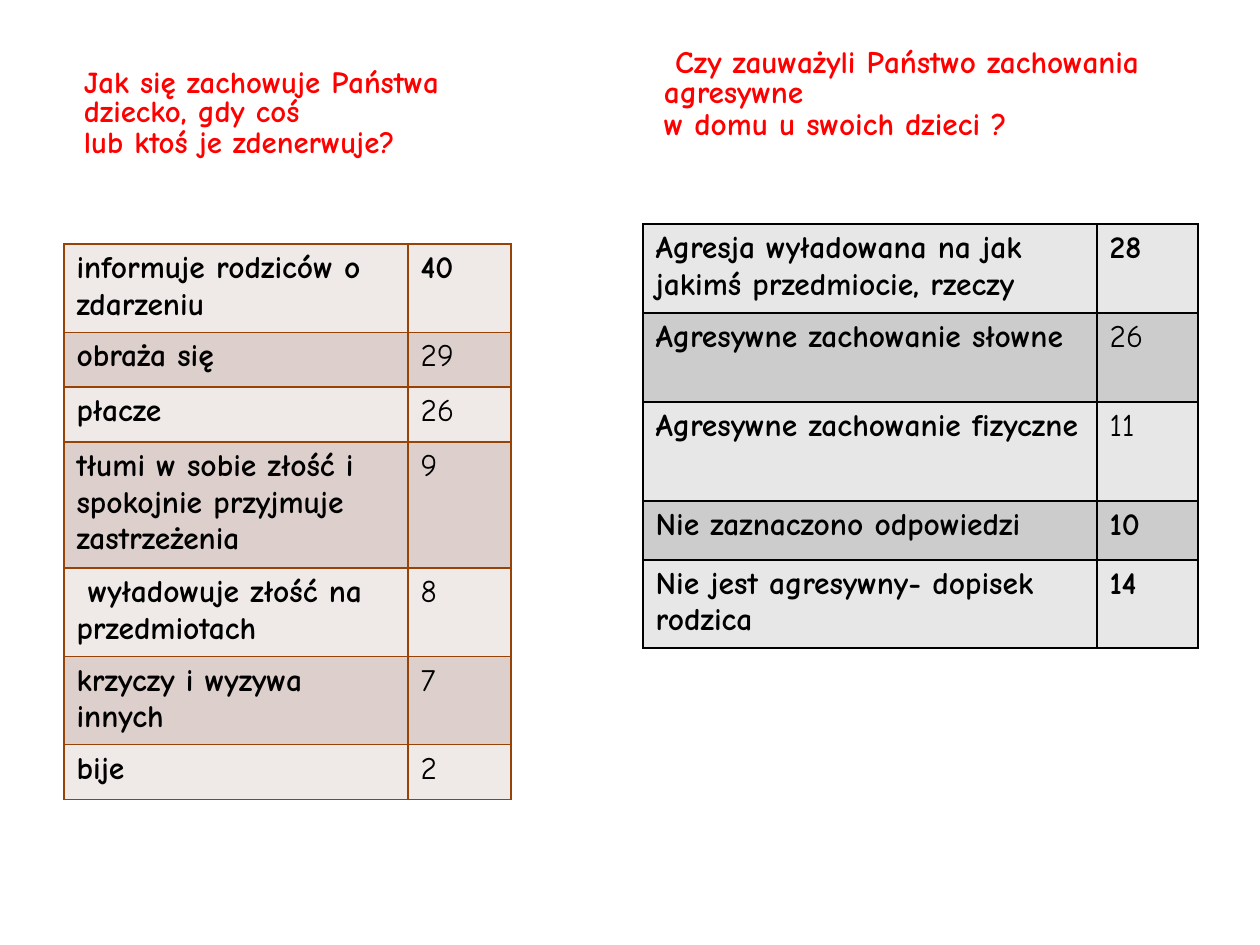
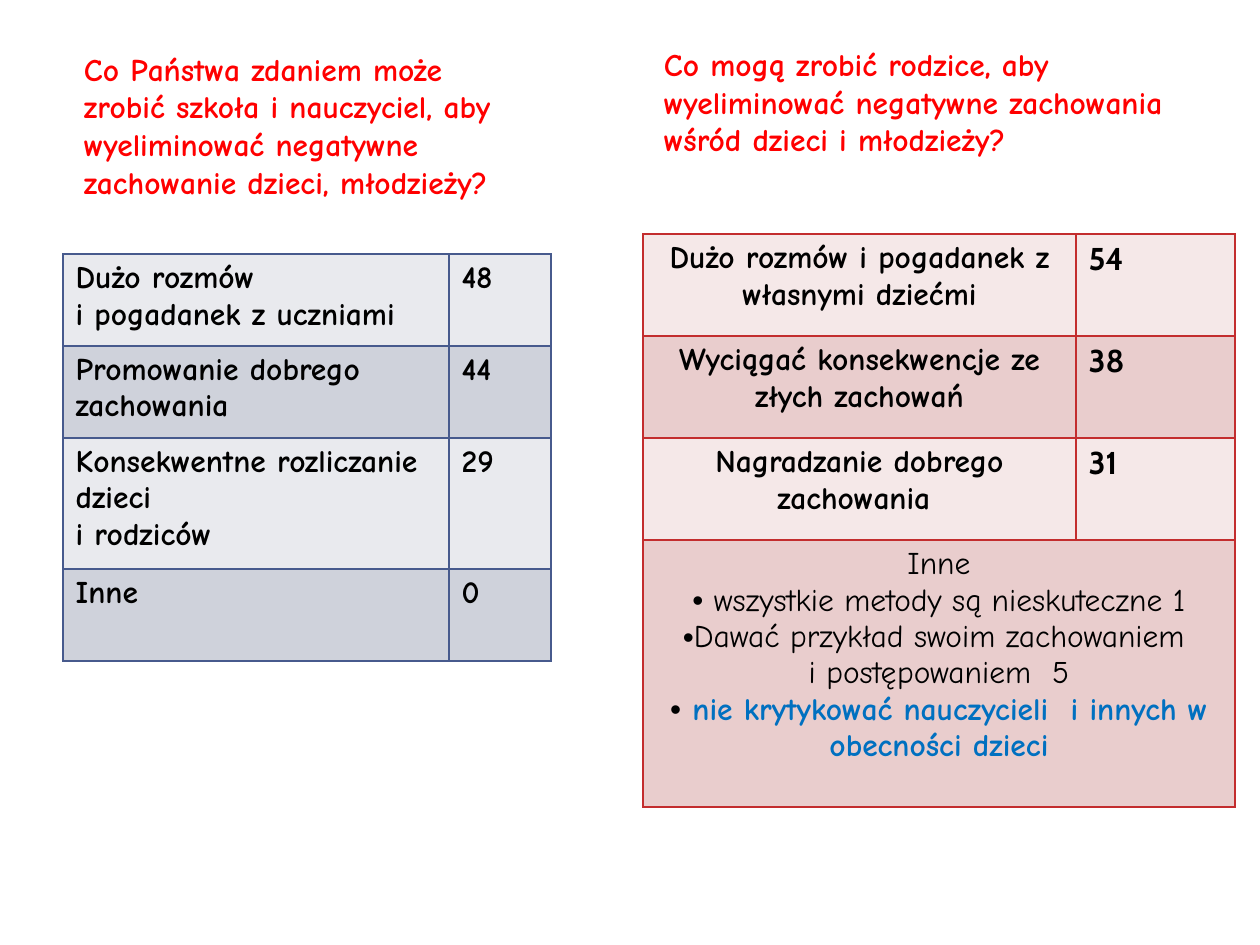
from lxml.etree import SubElement
from pptx import Presentation
from pptx.dml.color import RGBColor
from pptx.enum.text import MSO_ANCHOR, PP_ALIGN
from pptx.oxml.ns import qn
from pptx.util import Emu, Pt

PX_PER_INCH = 126
BODY_FONT = "Comic Neue"
NUMBER_FONT = "Cabin"
BODY_SIZE = 18

WHITE = RGBColor(0xFF, 0xFF, 0xFF)
BLACK = RGBColor(0x00, 0x00, 0x00)
QUESTION_RED = RGBColor(0xFF, 0x00, 0x00)
ADVICE_BLUE = RGBColor(0x00, 0x70, 0xC0)

BROWN = (RGBColor(0x96, 0x43, 0x05), RGBColor(0xEF, 0xE9, 0xE7), RGBColor(0xDD, 0xCF, 0xCC))
GREY = (BLACK, RGBColor(0xE7, 0xE7, 0xE7), RGBColor(0xCC, 0xCC, 0xCC))
NAVY = (RGBColor(0x47, 0x5A, 0x8D), RGBColor(0xE9, 0xEA, 0xEE), RGBColor(0xCF, 0xD2, 0xDB))
RED = (RGBColor(0xC3, 0x2D, 0x2E), RGBColor(0xF5, 0xE8, 0xE8), RGBColor(0xE9, 0xCD, 0xCD))

ANGER_REACTIONS = [
    ("informuje rodziców o zdarzeniu", "40", True, 86),
    ("obraża się", "29", False, 55),
    ("płacze", "26", False, 55),
    ("tłumi w sobie złość i spokojnie przyjmuje zastrzeżenia", "9", False, 122),
    (" wyładowuje złość na przedmiotach", "8", False, 86),
    ("krzyczy i wyzywa innych", "7", False, 86),
    ("bije", "2", False, 55),
]
HOME_AGGRESSION = [
    ("Agresja wyładowana na jak\njakimś przedmiocie, rzeczy", "28", True, 89),
    ("Agresywne zachowanie słowne", "26", False, 89),
    ("Agresywne zachowanie fizyczne", "11", False, 99),
    ("Nie zaznaczono odpowiedzi", "10", True, 59),
    ("Nie jest agresywny- dopisek rodzica", "14", True, 86),
]
SCHOOL_ACTIONS = [
    ("Dużo rozmów\ni pogadanek z uczniami", "48", True, 92),
    ("Promowanie dobrego zachowania", "44", True, 92),
    ("Konsekwentne rozliczanie dzieci\ni rodziców", "29", True, 131),
    ("Inne", "0", True, 92),
]
PARENT_ACTIONS = [
    ("Dużo rozmów i pogadanek z własnymi dziećmi", "54", True, 102),
    ("Wyciągać konsekwencje ze złych zachowań", "38", True, 102),
    ("Nagradzanie dobrego zachowania ", "31", True, 102),
    ("", "", False, 267),
]
OTHER_ADVICE = """Inne
• wszystkie metody są nieskuteczne 1
•Dawać przykład swoim zachowaniem 
i postępowaniem  5
• nie krytykować nauczycieli  i innych w obecności dzieci"""


def px(length):
    return Emu(round(length * 914400 / PX_PER_INCH))


def style_font(font, size=BODY_SIZE, color=BLACK, bold=True, name=BODY_FONT):
    font.name = name
    font.size = Pt(size)
    font.bold = bold
    font.color.rgb = color


def add_bullet(paragraph):
    properties = paragraph._p.get_or_add_pPr()
    properties.set("marL", "0")
    properties.set("indent", "0")
    defaults = properties.find(qn("a:defRPr"))
    bullet_color = SubElement(properties, qn("a:buClr"))
    SubElement(bullet_color, qn("a:srgbClr"), val=str(BLACK))
    SubElement(properties, qn("a:buFont"), typeface="Arial")
    SubElement(properties, qn("a:buChar"), char="•")
    if defaults is not None:
        properties.append(defaults)


def write_lines(frame, text):
    lines = text.split("\n")
    paragraphs = [frame.paragraphs[0]] + [frame.add_paragraph() for _ in lines[1:]]
    for paragraph, line in zip(paragraphs, lines):
        paragraph.add_run().text = line.removeprefix("•")
        if line.startswith("•"):
            add_bullet(paragraph)
    return paragraphs


def add_question(slide, box, text, size=BODY_SIZE, spacing=1.0, lift=0):
    question = slide.shapes.add_textbox(*map(px, box))
    question.fill.solid()
    question.fill.fore_color.rgb = WHITE
    question.line.color.rgb = WHITE
    question.line.width = Pt(0.85)
    frame = question.text_frame
    frame.word_wrap = True
    frame.vertical_anchor = MSO_ANCHOR.MIDDLE
    frame.margin_left = px(21)
    frame.margin_bottom = px(6 + lift)
    for paragraph in write_lines(frame, text):
        paragraph.line_spacing = spacing
        paragraph.space_before = Pt(1)
        style_font(paragraph.font, size, QUESTION_RED)


def style_cell(cell, border, fill):
    properties = cell._tc.get_or_add_tcPr()
    for side in ("lnL", "lnR", "lnT", "lnB"):
        edge = SubElement(properties, qn(f"a:{side}"), w=str(Pt(1)))
        paint = SubElement(edge, qn("a:solidFill"))
        SubElement(paint, qn("a:srgbClr"), val=str(border))
    cell.fill.solid()
    cell.fill.fore_color.rgb = fill


def add_answers(slide, corner, widths, answers, palette, align=PP_ALIGN.LEFT, number_font=BODY_FONT):
    border, *bands = palette
    height = sum(answer[3] for answer in answers)
    table = slide.shapes.add_table(
        len(answers), 2, *map(px, (*corner, sum(widths), height))
    ).table
    table.first_row = table.horz_banding = False
    for column, width in zip(table.columns, widths):
        column.width = px(width)
    for index, (label, count, bold, row_height) in enumerate(answers):
        table.rows[index].height = px(row_height)
        label_cell, count_cell = table.rows[index].cells
        for cell in (label_cell, count_cell):
            style_cell(cell, border, bands[index % 2])
        if label:
            for paragraph in write_lines(label_cell.text_frame, label):
                paragraph.alignment = align
                style_font(paragraph.font)
            number = write_lines(count_cell.text_frame, count)[0]
            style_font(number.font, bold=bold, name=number_font)
    return table


def add_other_advice(table):
    last = len(table.rows) - 1
    cell = table.cell(last, 0)
    cell.merge(table.cell(last, 1))
    paragraphs = write_lines(cell.text_frame, OTHER_ADVICE)
    for paragraph in paragraphs:
        paragraph.alignment = PP_ALIGN.CENTER
        style_font(paragraph.font, bold=False)
    style_font(paragraphs[-1].font, color=ADVICE_BLUE)


def main():
    deck = Presentation()
    deck.slide_width, deck.slide_height = px(1260), px(945)
    blank = deck.slide_layouts[6]

    behaviour = deck.slides.add_slide(blank)
    add_question(behaviour, (63, 45, 488, 139),
                 "Jak się zachowuje Państwa dziecko, gdy coś\nlub ktoś je zdenerwuje?",
                 17.6, 0.8)
    add_question(behaviour, (643, 45, 554, 120),
                 " Czy zauważyli Państwo zachowania agresywne\nw domu u swoich dzieci ?",
                 17.9, 0.8, lift=20)
    add_answers(behaviour, (64, 244), (344, 103), ANGER_REACTIONS, BROWN)
    add_answers(behaviour, (643, 224), (454, 101), HOME_AGGRESSION, GREY)

    remedies = deck.slides.add_slide(blank)
    add_question(remedies, (63, 26, 478, 198),
                 "Co Państwa zdaniem może zrobić szkoła i nauczyciel, aby wyeliminować "
                 "negatywne zachowanie dzieci, młodzieży?")
    add_question(remedies, (643, 26, 554, 189),
                 "Co mogą zrobić rodzice, aby wyeliminować negatywne zachowania "
                 "wśród dzieci i młodzieży?", lift=38)
    add_answers(remedies, (63, 254), (386, 102), SCHOOL_ACTIONS, NAVY)
    parents = add_answers(remedies, (643, 234), (433, 159), PARENT_ACTIONS, RED,
                          PP_ALIGN.CENTER, NUMBER_FONT)
    add_other_advice(parents)

    deck.save("out.pptx")


if __name__ == "__main__":
    main()
